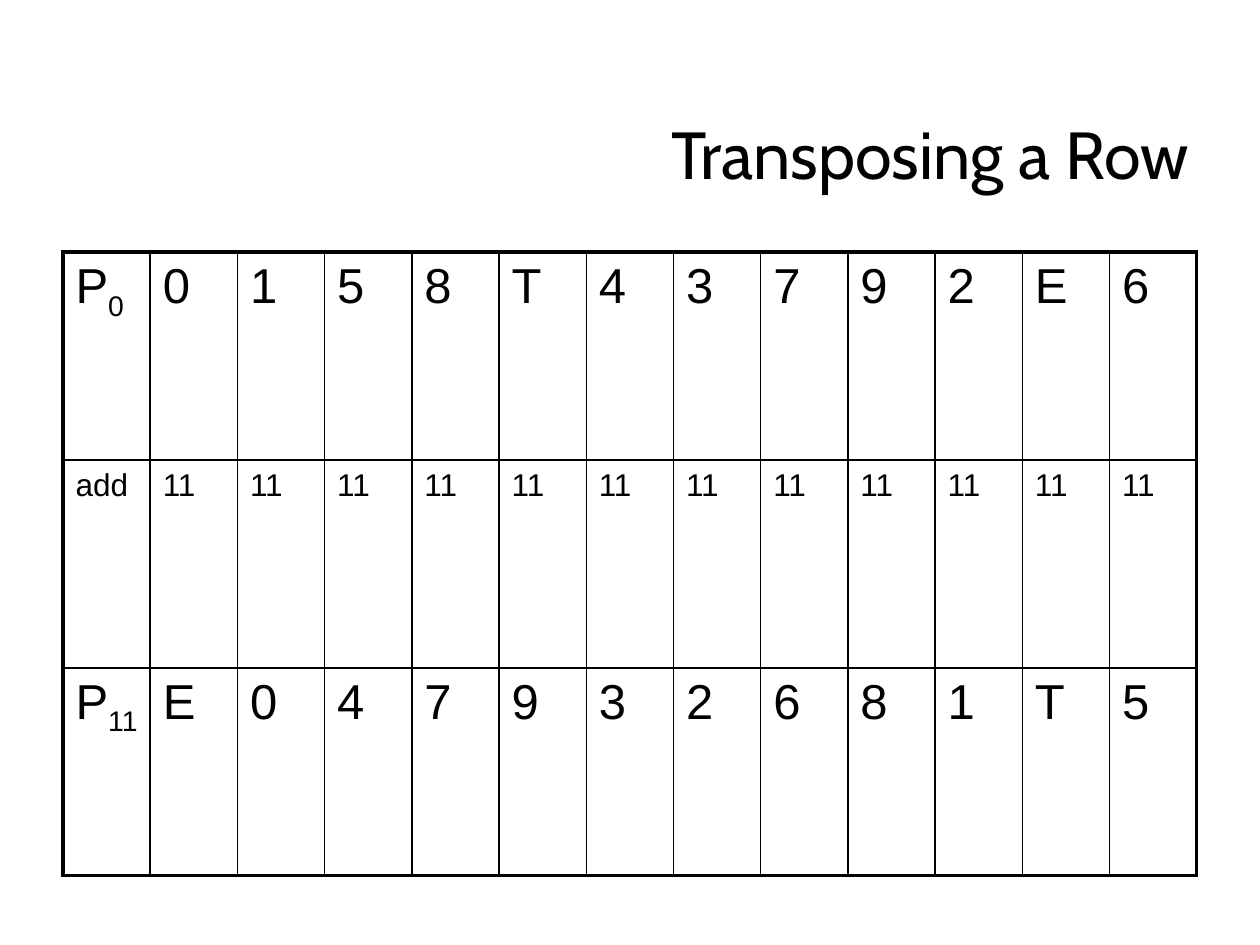
from lxml import etree
from pptx import Presentation
from pptx import util as u
from pptx.dml.color import RGBColor
from pptx.enum import text
from pptx.oxml.ns import qn

BLACK = "000000"
INSET = u.Inches(0.06)
INDENT = u.Inches(0.04)
THIN, THICK = 1, 2.25
ROWS = [
    (("P", "0"), "0 1 5 8 T 4 3 7 9 2 E 6".split(), 28),
    (("add", ""), ["11"] * 12, 18),
    (("P", "11"), "E 0 4 7 9 3 2 6 8 1 T 5".split(), 28),
]


def color(value):
    """Return the colour for a hex string."""
    return RGBColor.from_string(value)


def apply(target, values):
    """Set attributes of an object from a dict."""
    for name, value in values.items():
        setattr(target, name, value)


def set_insets(target):
    """Give a cell or text frame equal insets on all sides."""
    apply(target, {f"margin_{side}": INSET for side in ("left", "top", "right", "bottom")})


def add_span(para, content, font_name, size, baseline=0):
    """Add a formatted run, optionally lowered or raised."""
    span = para.add_run()
    span.text = content
    apply(span.font, {"name": font_name, "size": u.Pt(size), "bold": False})
    span.font.color.rgb = color(BLACK)
    if baseline:
        span._r.get_or_add_rPr().set("baseline", str(baseline * 1000))


def indent(para):
    """Set the small left indent of a paragraph."""
    props = para._p.get_or_add_pPr()
    props.set("marL", str(INDENT))
    props.set("indent", "0")


def set_borders(cell, widths):
    """Draw the cell borders from a dict of side to width in points."""
    props = cell._tc.get_or_add_tcPr()
    for position, (side, width) in enumerate(widths.items()):
        line = etree.Element(qn(f"a:ln{side}"), w=str(u.Pt(width)))
        fill = etree.SubElement(line, qn("a:solidFill"))
        etree.SubElement(fill, qn("a:srgbClr"), val=BLACK)
        props.insert(position, line)


def add_title(page, left, top, width, height):
    """Place the right-aligned title in its box."""
    title = page.shapes.title
    apply(title, {"left": left, "top": top, "width": width, "height": height})
    frame = title.text_frame
    set_insets(frame)
    apply(frame, {"vertical_anchor": text.MSO_ANCHOR.MIDDLE, "word_wrap": True})
    para = frame.paragraphs[0]
    indent(para)
    para.alignment = text.PP_ALIGN.RIGHT
    add_span(para, "Transposing a Row", "Cabin", 38)


def add_row_table(page, left, top, width, height):
    """Place the table that transposes the tone row."""
    row_count, column_count = len(ROWS), len(ROWS[0][1]) + 1
    table = page.shapes.add_table(row_count, column_count, left, top, width, height).table
    apply(table, {"first_row": False, "horz_banding": False})
    for column in table.columns:
        column.width = width // column_count
    for r, ((label, subscript), notes, size) in enumerate(ROWS):
        table.rows[r].height = height // row_count
        for c, content in enumerate([label] + notes):
            cell = table.cell(r, c)
            set_insets(cell)
            cell.fill.background()
            para = cell.text_frame.paragraphs[0]
            indent(para)
            add_span(para, content, "Arial", size)
            if c == 0 and subscript:
                add_span(para, subscript, "Arial", size, -25)
            set_borders(cell, {
                "L": THICK if c == 0 else THIN,
                "R": THICK if c == column_count - 1 else THIN,
                "T": THICK if r == 0 else THIN,
                "B": THICK if r == row_count - 1 else THIN,
            })


def main():
    """Build and save the deck."""
    deck = Presentation()
    apply(deck, {"slide_width": u.Inches(10), "slide_height": u.Inches(7.5)})
    page = deck.slides.add_slide(deck.slide_layouts[5])
    add_title(page, u.Inches(0.5), u.Inches(0.42), u.Inches(9), u.Inches(1.58))
    add_row_table(page, u.Inches(0.5), u.Inches(2), u.Inches(9), u.Inches(4.95))
    deck.save("out.pptx")


if __name__ == "__main__":
    main()
